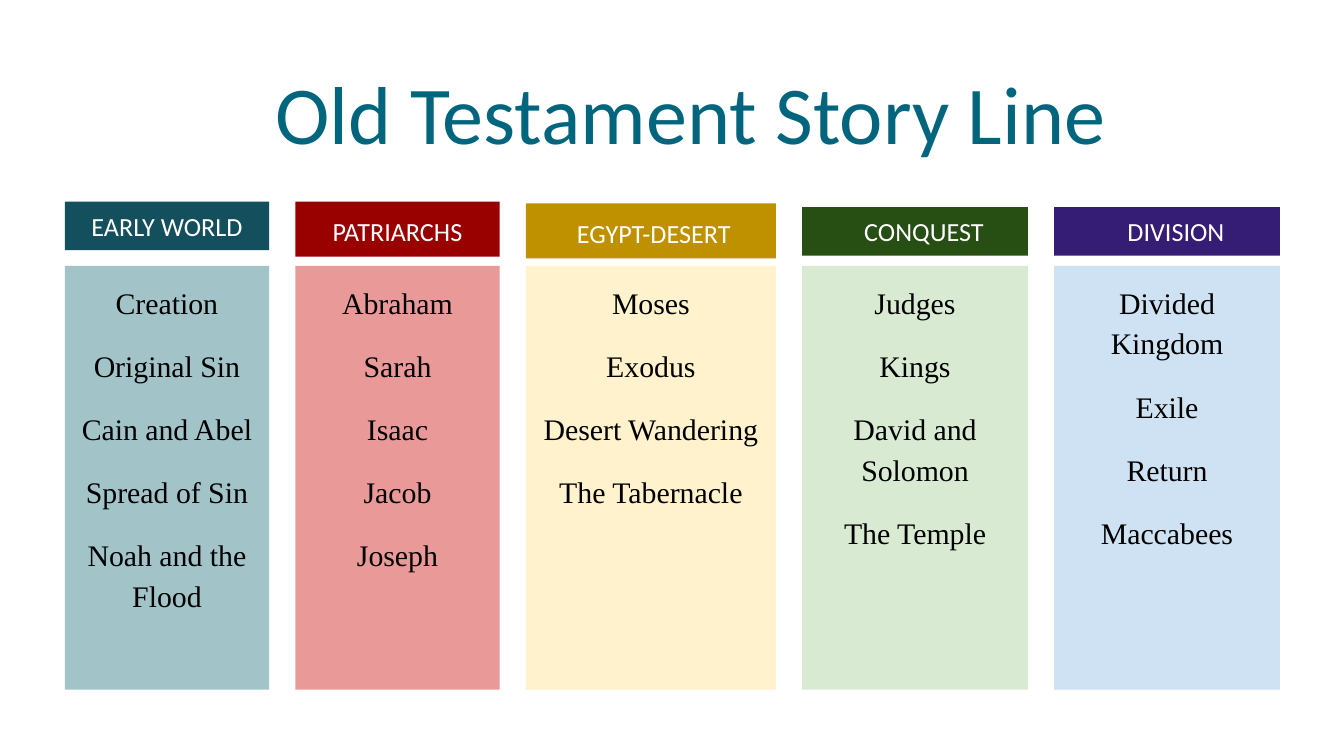
import pptx
import pptx.util
import pptx.dml.color
import pptx.enum.shapes
import pptx.enum.text

Pt = pptx.util.Pt
RGB = pptx.dml.color.RGBColor.from_string
ANCHOR = pptx.enum.text.MSO_ANCHOR

COLORS = {
    "title": "00657D", "white": "FFFFFF", "black": "000000",
    "teal": "134F5C", "light teal": "A2C4C9",
    "red": "990000", "light red": "EA9999",
    "gold": "BF9000", "light gold": "FFF2CC",
    "green": "274E13", "light green": "D9EAD3",
    "violet": "351C75", "light blue": "CFE2F3",
}


def set_frame(tf, anchor, indent=0):
    tf.word_wrap = True
    tf.auto_size = pptx.enum.text.MSO_AUTO_SIZE.NONE
    tf.vertical_anchor = anchor
    tf.margin_top = tf.margin_bottom = tf.margin_right = Pt(7.2)
    tf.margin_left = Pt(7.2 + indent)


def add_block(s, box, fill, lines, font, size, color, anchor, indent=0):
    sp = s.shapes.add_shape(pptx.enum.shapes.MSO_SHAPE.RECTANGLE, *[Pt(v) for v in box])
    sp.shadow.inherit = False
    sp.fill.solid()
    sp.fill.fore_color.rgb = RGB(COLORS[fill])
    sp.line.fill.background()
    tf = sp.text_frame
    set_frame(tf, anchor, indent)
    for i, line in enumerate(lines):
        p = tf.add_paragraph() if i else tf.paragraphs[0]
        p.text = line
        p.alignment = pptx.enum.text.PP_ALIGN.CENTER
        if i:
            p.space_before = Pt(12)
        p.font.name, p.font.size = font, Pt(size)
        p.font.color.rgb = RGB(COLORS[color])
    return tf


prs = pptx.Presentation()
prs.slide_width, prs.slide_height = Pt(720), Pt(405)
s = prs.slides.add_slide(prs.slide_layouts[5])

# Title
title = s.shapes.title
title.left, title.top, title.width, title.height = Pt(34.6), Pt(26), Pt(671), Pt(52)
set_frame(title.text_frame, ANCHOR.TOP)
p = title.text_frame.paragraphs[0]
p.text = "Old Testament Story Line"
p.alignment = pptx.enum.text.PP_ALIGN.CENTER
p.font.name, p.font.size = "Calibri", Pt(44)
p.font.color.rgb = RGB(COLORS["title"])

# Periods: heading, fills, column width, heading top, height, indent and anchor, events
periods = [
    ("EARLY WORLD", "teal", "light teal", 109.5, 108, 26, 0, ANCHOR.MIDDLE,
     ["Creation", "Original Sin", "Cain and Abel", "Spread of Sin", "Noah and the Flood"]),
    ("PATRIARCHS", "red", "light red", 109.5, 108, 29.5, 0, ANCHOR.TOP,
     ["Abraham", "Sarah", "Isaac", "Jacob", "Joseph"]),
    ("EGYPT-DESERT", "gold", "light gold", 134, 109, 29.5, 3, ANCHOR.TOP,
     ["Moses", "Exodus", "Desert Wandering", "The Tabernacle"]),
    ("CONQUEST", "green", "light green", 121, 111, 26, 9.5, ANCHOR.MIDDLE,
     ["Judges", "Kings", "David and Solomon", "The Temple"]),
    ("DIVISION", "violet", "light blue", 121, 111, 26, 9.5, ANCHOR.MIDDLE,
     ["Divided Kingdom", "Exile", "Return", "Maccabees"]),
]

# Columns, left to right with an equal gap
left, gap = 34.7, 14
for heading, dark, light, width, top, height, indent, anchor, events in periods:
    tf = add_block(s, (left, 142.5, width, 227), light, events,
                   "Times New Roman", 16, "black", ANCHOR.TOP)
    for p in tf.paragraphs:
        p.line_spacing = 1.14
    add_block(s, (left, top, width, height), dark, [heading],
              "Calibri", 14, "white", anchor, indent)
    left += width + gap

prs.save("out.pptx")
